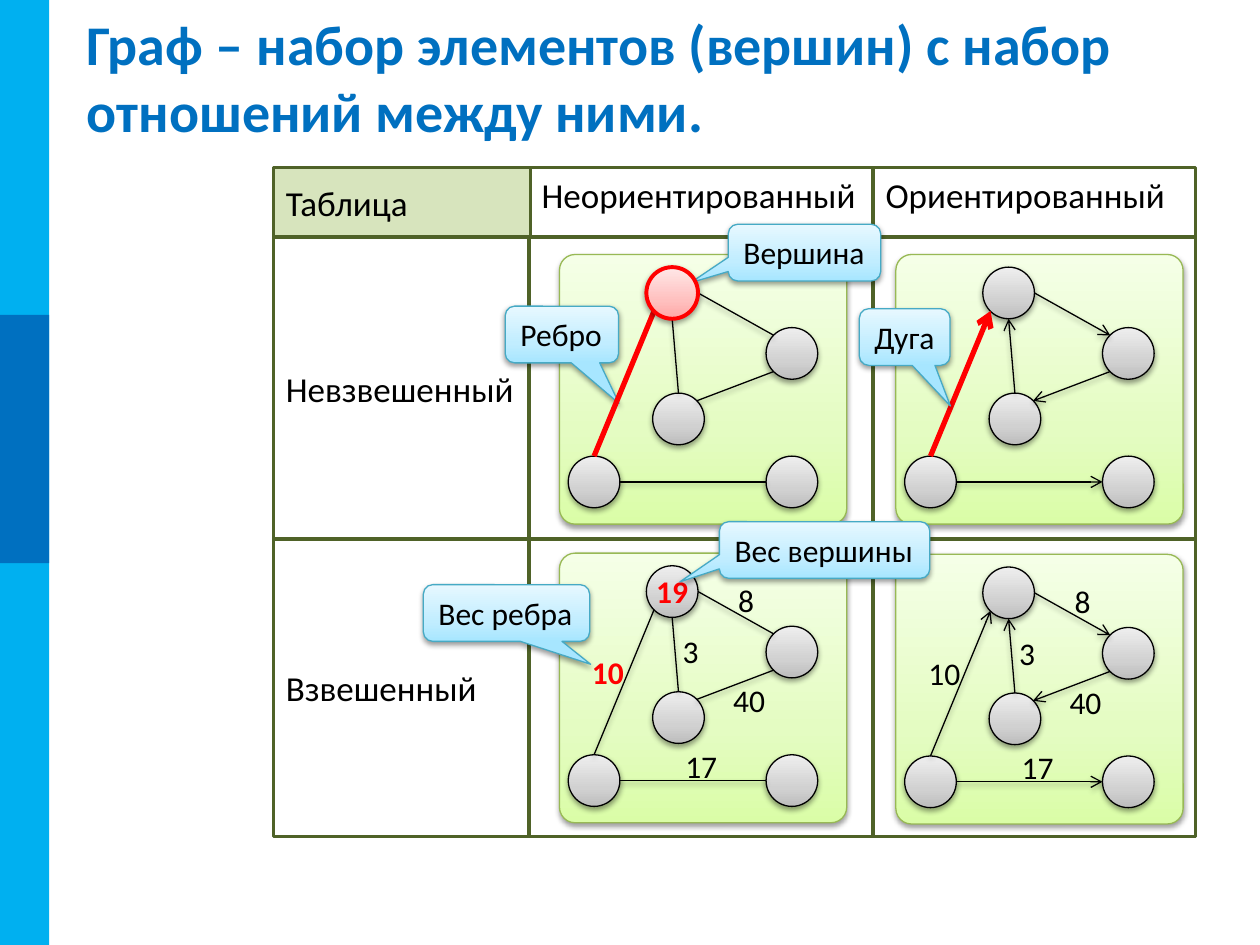
from copy import deepcopy
from dataclasses import dataclass
from typing import Optional

from pptx import Presentation
from pptx.dml.color import RGBColor
from pptx.enum.shapes import MSO_CONNECTOR, MSO_SHAPE
from pptx.enum.text import MSO_ANCHOR
from pptx.oxml import parse_xml
from pptx.oxml.ns import nsdecls, qn
from pptx.util import Inches, Pt

BLACK = RGBColor(0x00, 0x00, 0x00)
RED = RGBColor(0xFF, 0x00, 0x00)
SKY = RGBColor(0x00, 0xB0, 0xF0)
BLUE = RGBColor(0x00, 0x70, 0xC0)
TABLE_LINE = RGBColor(0x4F, 0x62, 0x28)
TABLE_HEADER = RGBColor(0xD7, 0xE4, 0xBD)
PANEL_LINE = RGBColor(0x98, 0xB9, 0x55)
CALLOUT_LINE = RGBColor(0x46, 0xAA, 0xC5)
GREEN_SHADES = (RGBColor(0xDA, 0xFD, 0xA7), RGBColor(0xE4, 0xFC, 0xC2), RGBColor(0xF5, 0xFF, 0xE7))
GREY_SHADES = (RGBColor(0xBD, 0xBD, 0xBD), RGBColor(0xD1, 0xD1, 0xD1), RGBColor(0xEE, 0xEE, 0xEE))
RED_SHADES = (RGBColor(0xFF, 0xA6, 0xA5), RGBColor(0xFF, 0xC0, 0xBF), RGBColor(0xFF, 0xE7, 0xE7))
BLUE_SHADES = (RGBColor(0xA7, 0xE6, 0xFF), RGBColor(0xC1, 0xED, 0xFF), RGBColor(0xE7, 0xF8, 0xFF))

VERTEX_SIZE = 0.41
VERTICES = {"top": (0.69, 0.1), "right": (1.64, 0.58), "middle": (0.74, 1.1),
            "bottom_right": (1.64, 1.6), "bottom_left": (0.07, 1.6)}
TOP, BOTTOM, LEFT, RIGHT = (0.5, 0), (0.5, 1), (0, 0.5), (1, 0.5)
TOP_LEFT, TOP_RIGHT, BOTTOM_LEFT = (0.15, 0.15), (0.85, 0.15), (0.15, 0.85)


@dataclass
class Edge:
    start: str
    start_side: tuple
    end: str
    end_side: tuple
    weight: str
    weight_box: tuple


@dataclass
class Graph:
    left: float
    top: float
    directed: bool = False
    weighted: bool = False
    marked_vertex: bool = False
    marked_edge: bool = False
    marked_weight: bool = False


@dataclass
class Cell:
    text: str
    box: tuple
    anchor: MSO_ANCHOR = MSO_ANCHOR.MIDDLE
    fill: Optional[RGBColor] = None


@dataclass
class Callout:
    text: str
    box: tuple
    tip: tuple


EDGES = [
    Edge("bottom_left", TOP, "top", BOTTOM_LEFT, "10", (0.16, 0.74, 0.47)),
    Edge("top", RIGHT, "right", TOP_LEFT, "8", (1.32, 0.17, 0.29)),
    Edge("middle", TOP, "top", BOTTOM, "3", (0.88, 0.58, 0.29)),
    Edge("right", BOTTOM_LEFT, "middle", TOP_RIGHT, "40", (1.28, 0.97, 0.66)),
    Edge("bottom_left", RIGHT, "bottom_right", LEFT, "17", (0.9, 1.49, 0.52)),
]
GRAPHS = [
    Graph(4.44, 2.02, marked_vertex=True, marked_edge=True),
    Graph(7.11, 2.02, directed=True, marked_edge=True),
    Graph(4.44, 4.39, weighted=True, marked_weight=True),
    Graph(7.11, 4.4, directed=True, weighted=True),
]
CELLS = [
    Cell("Невзвешенный", (2.17, 1.88, 7.32, 2.4)),
    Cell("Взвешенный", (2.17, 4.28, 7.32, 2.36)),
    Cell("Ориентированный", (6.93, 1.33, 2.56, 5.31), MSO_ANCHOR.TOP),
    Cell("Неориентированный", (4.2, 1.33, 2.73, 5.31), MSO_ANCHOR.TOP),
]
HEADER = Cell("Таблица", (2.17, 1.33, 2.04, 0.55), fill=TABLE_HEADER)
EDGE_CALLOUT = Callout("Ребро", (4.01, 2.43, 0.9, 0.45), (0.504, 1.216))
CALLOUTS = [
    Callout("Дуга", (6.82, 2.45, 0.72, 0.45), (0.504, 1.216)),
    Callout("Вес ребра", (3.36, 4.64, 1.32, 0.45), (0.506, 0.905)),
    Callout("Вес вершины", (5.71, 4.14, 1.67, 0.45), (-0.688, 0.563)),
    Callout("Вершина", (5.78, 1.78, 1.21, 0.45), (-0.748, 0.532)),
]


def write_text(shape, text: str, *, size=18, color=BLACK, bold=False, anchor=MSO_ANCHOR.TOP, wrap=True):
    frame = shape.text_frame
    frame.word_wrap = wrap
    frame.vertical_anchor = anchor
    paragraph = frame.paragraphs[0]
    paragraph.text = text
    paragraph.font.name = "Calibri"
    paragraph.font.size = Pt(size)
    paragraph.font.bold = bold
    paragraph.font.color.rgb = color
    properties = paragraph._p.get_or_add_pPr()
    properties.set("algn", "l")


def add_text(shapes, text: str, box: tuple, **text_format):
    write_text(shapes.add_textbox(*map(Inches, box)), text, **text_format)


def add_effects(shape, shadow: bool) -> None:
    properties = shape._element.spPr
    for effects in properties.findall(qn("a:effectLst")):
        properties.remove(effects)
    content = ('<a:outerShdw blurRad="40000" dist="20000" dir="5400000" rotWithShape="0">'
               '<a:srgbClr val="000000"><a:alpha val="38000"/></a:srgbClr></a:outerShdw>') if shadow else ""
    properties.append(parse_xml(f'<a:effectLst {nsdecls("a")}>{content}</a:effectLst>'))


def add_block(shapes, kind, box: tuple, *, fill=None, shades=None, line=None, width=0.75):
    shape = shapes.add_shape(kind, *map(Inches, box))
    if shades:
        shape.fill.gradient()
        shape.fill.gradient_angle = 90
        stop_list = shape._element.spPr.find(qn("a:gradFill")).find(qn("a:gsLst"))
        stop_list.append(deepcopy(stop_list[0]))
        for stop, position, color in zip(shape.fill.gradient_stops, (0, 0.35, 1), shades):
            stop.position = position
            stop.color.rgb = color
    elif fill is not None:
        shape.fill.solid()
        shape.fill.fore_color.rgb = fill
    else:
        shape.fill.background()
    if line is not None:
        shape.line.color.rgb = line
        shape.line.width = Pt(width)
    else:
        shape.line.fill.background()
    add_effects(shape, shadow=bool(shades))
    return shape


def add_cell(shapes, cell: Cell) -> None:
    shape = add_block(shapes, MSO_SHAPE.RECTANGLE, cell.box, fill=cell.fill, line=TABLE_LINE, width=2)
    write_text(shape, cell.text, size=20, anchor=cell.anchor)


def add_callout(shapes, callout: Callout) -> None:
    shape = add_block(shapes, MSO_SHAPE.ROUNDED_RECTANGULAR_CALLOUT, callout.box,
                      shades=BLUE_SHADES, line=CALLOUT_LINE)
    shape.adjustments[0], shape.adjustments[1] = callout.tip
    write_text(shape, callout.text, wrap=False)


def add_vertex(shapes, graph: Graph, name: str, shades=GREY_SHADES, line=BLACK, width=0.75) -> None:
    x, y = VERTICES[name]
    box = (graph.left + x, graph.top + y, VERTEX_SIZE, VERTEX_SIZE)
    add_block(shapes, MSO_SHAPE.OVAL, box, shades=shades, line=line, width=width)


def add_edge(shapes, graph: Graph, edge: Edge, color=BLACK, width=0.75, shadow=True) -> None:
    points = []
    for name, side in ((edge.start, edge.start_side), (edge.end, edge.end_side)):
        x, y = VERTICES[name]
        points += [Inches(graph.left + x + side[0] * VERTEX_SIZE), Inches(graph.top + y + side[1] * VERTEX_SIZE)]
    connector = shapes.add_connector(MSO_CONNECTOR.STRAIGHT, *points)
    connector.line.color.rgb = color
    connector.line.width = Pt(width)
    if graph.directed:
        connector.line._get_or_add_ln().append(parse_xml(f'<a:tailEnd {nsdecls("a")} type="arrow"/>'))
    add_effects(connector, shadow)


def add_graph(shapes, graph: Graph) -> None:
    panel = add_block(shapes, MSO_SHAPE.ROUNDED_RECTANGLE, (graph.left, graph.top, 2.28, 2.14),
                      shades=GREEN_SHADES, line=PANEL_LINE)
    panel.adjustments[0] = 0.058
    for name in VERTICES:
        if not (graph.marked_vertex and name == "top"):
            add_vertex(shapes, graph, name)
    for edge in EDGES[1:] if graph.marked_edge else EDGES:
        add_edge(shapes, graph, edge)
    for edge in EDGES if graph.weighted else []:
        x, y, width = edge.weight_box
        marked = graph.marked_weight and edge is EDGES[0]
        add_text(shapes, edge.weight, (graph.left + x, graph.top + y, width, 0.4),
                 color=RED if marked else BLACK, bold=marked)


def main() -> None:
    presentation = Presentation()
    presentation.slide_width, presentation.slide_height = Inches(10), Inches(7.5)
    slide = presentation.slides.add_slide(presentation.slide_layouts[6])
    shapes = slide.shapes
    add_block(shapes, MSO_SHAPE.RECTANGLE, (0, 0, 0.39, 7.5), fill=SKY)
    add_block(shapes, MSO_SHAPE.RECTANGLE, (0, 2.5, 0.39, 1.97), fill=BLUE)
    for cell in CELLS:
        add_cell(shapes, cell)
    add_text(shapes, "Граф – набор элементов (вершин) с набор отношений между ними.", (0.59, 0.3, 9.06, 0.61),
             size=32, color=BLUE, bold=True, anchor=MSO_ANCHOR.MIDDLE)
    for graph in GRAPHS:
        add_graph(shapes.add_group_shape().shapes, graph)
    add_callout(shapes, EDGE_CALLOUT)
    for graph in GRAPHS:
        if graph.marked_edge:
            add_edge(shapes, graph, EDGES[0], RED, 3, shadow=False)
    add_text(shapes, "19", (5.11, 4.49, 0.47, 0.4), color=RED, bold=True)
    for callout in CALLOUTS:
        add_callout(shapes, callout)
    add_vertex(shapes, GRAPHS[0], "top", RED_SHADES, RED, 2.25)
    add_cell(shapes, HEADER)
    presentation.save("out.pptx")


if __name__ == "__main__":
    main()
